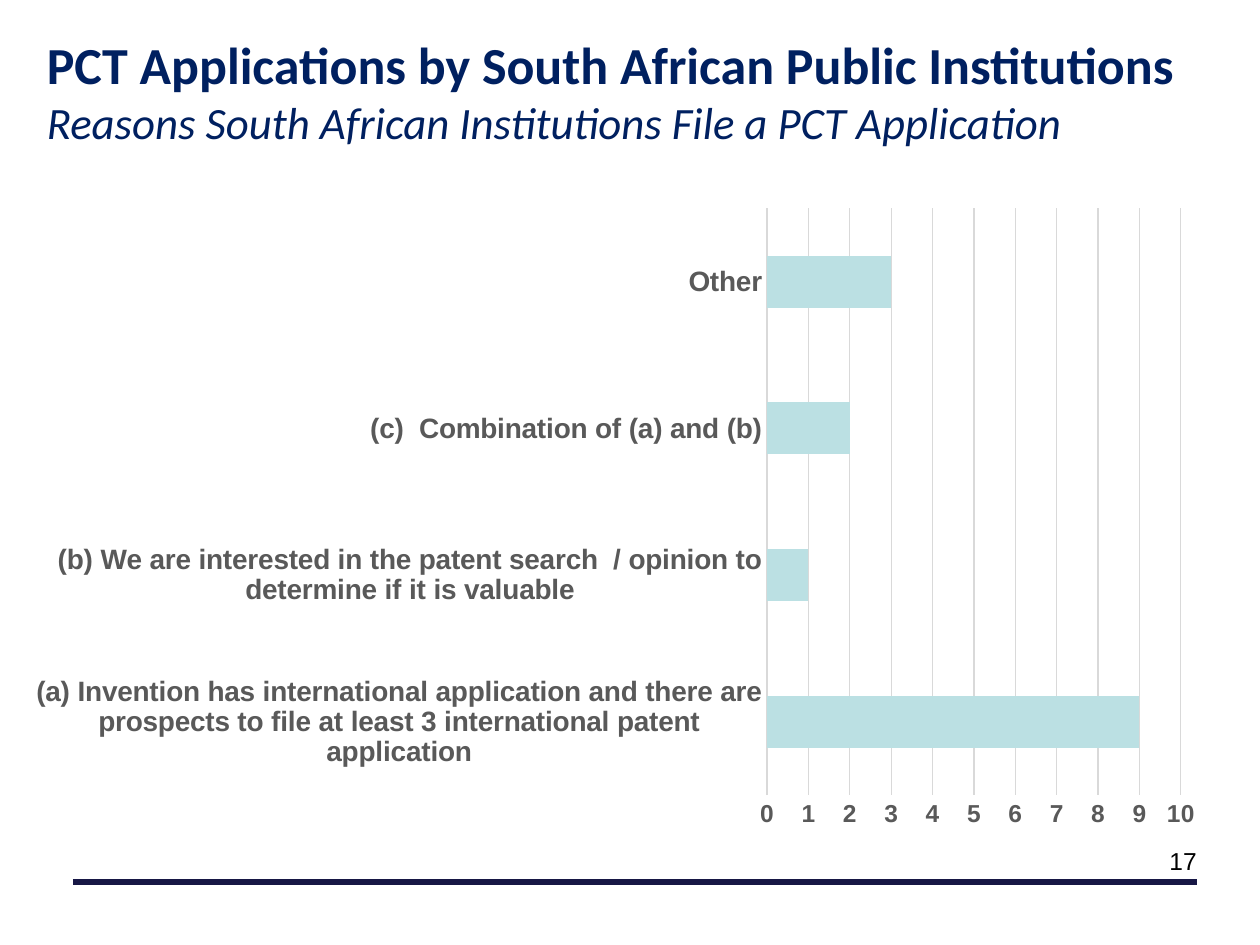
"""Build a slide with a bar chart of the reasons for filing PCT applications."""
from lxml import etree
from pptx import Presentation
from pptx.chart.data import CategoryChartData
from pptx.dml.color import RGBColor
from pptx.enum.chart import XL_CHART_TYPE as ChartType, XL_TICK_MARK as Tick
from pptx.enum.shapes import MSO_CONNECTOR as Connector
from pptx.enum.text import MSO_ANCHOR as Anchor, MSO_AUTO_SIZE as AutoSize, PP_ALIGN as Align
from pptx.oxml import parse_xml
from pptx.oxml.ns import nsdecls, qn
from pptx.util import Cm, Pt

REASONS = {
    "(a) Invention has international application and there are prospects "
    "to file at least 3 international patent application": 9,
    "(b) We are interested in the patent search  / opinion to determine if it is valuable": 1,
    "(c)  Combination of (a) and (b)": 2,
    "Other": 3,
}


def rgb(value):
    return RGBColor.from_string(value)


class Deck:
    """Hold the style and the current slide."""

    navy, rule, bar, label, grid = "002060", "171745", "BBE0E3", "595959", "D9D9D9"
    left, width = Cm(0.69), Cm(23.83)

    def __init__(self):
        self.prs = Presentation()
        self.prs.slide_width, self.prs.slide_height = Cm(25.4), Cm(19.05)
        self.s = self.prs.slides.add_slide(self.prs.slide_layouts[5])

    def font(self, font, size, color, name="Arial", bold=False, italic=False):
        font.name, font.size, font.bold, font.italic = name, Pt(size), bold, italic
        font.color.rgb = rgb(color)

    def title(self, heading, subheading):
        sp = self.s.shapes.title
        sp.left, sp.top, sp.width, sp.height = self.left, Cm(0.46), self.width, Cm(2.72)
        tf = sp.text_frame
        tf.text = f"{heading}\n{subheading}"
        tf.auto_size, tf.vertical_anchor = AutoSize.NONE, Anchor.MIDDLE
        for p in tf.paragraphs:
            p.alignment = Align.LEFT
        first, second = tf.paragraphs
        self.font(first.font, 29.7, self.navy, "Calibri", bold=True)
        self.font(second.font, 25.6, self.navy, "Calibri", italic=True)

    def line(self, x1, x2, y):
        ln = self.s.shapes.add_connector(Connector.STRAIGHT, Cm(x1), Cm(y), Cm(x2), Cm(y))
        ln.line.color.rgb, ln.line.width = rgb(self.rule), Pt(3)
        etree.SubElement(ln._element.spPr, qn("a:effectLst"))

    def page_number(self, number):
        tf = self.s.shapes.add_textbox(Cm(23.29), Cm(16.94), Cm(1.12), Cm(0.84)).text_frame
        tf.word_wrap, tf.auto_size = False, AutoSize.SHAPE_TO_FIT_TEXT
        p = tf.paragraphs[0]
        p.text, p.alignment = str(number), Align.CENTER
        self.font(p.font, 14, "000000")

    def axis(self, axis, size):
        axis.major_tick_mark = axis.minor_tick_mark = Tick.NONE
        self.font(axis.tick_labels.font, size, self.label, bold=True)

    def hairline(self, line):
        line.color.rgb, line.width = rgb(self.grid), Pt(0.75)

    def bar_chart(self, name, values):
        data = CategoryChartData()
        data.categories = list(values)
        data.add_series(name, list(values.values()))
        chart = self.s.shapes.add_chart(
            ChartType.BAR_CLUSTERED, self.left, Cm(3.94), self.width, Cm(13), data).chart
        chart.has_legend = chart.has_title = False
        self.font(chart.font, 10, "000000")
        cat, val = chart.category_axis, chart.value_axis
        self.axis(cat, 16)
        self.axis(val, 14)
        self.hairline(cat.format.line)
        self.hairline(val.major_gridlines.format.line)
        val.format.line.fill.background()
        val.minimum_scale, val.maximum_scale, val.major_unit = 0, 10, 1
        plot = chart.plots[0]
        plot.gap_width, plot.vary_by_categories = 182, False
        fill = plot.series[0].format.fill
        fill.solid()
        fill.fore_color.rgb = rgb(self.bar)
        self.plot_area(chart, x=0.62, y=0.02, w=0.35, h=0.91)

    def plot_area(self, chart, **box):
        area = chart._chartSpace.chart.plotArea
        for old in area.findall(qn("c:layout")):
            area.remove(old)
        modes = '<c:xMode val="edge"/><c:yMode val="edge"/>'
        sizes = "".join(f'<c:{key} val="{value}"/>' for key, value in box.items())
        area.insert(0, parse_xml(
            f'<c:layout {nsdecls("c")}><c:manualLayout><c:layoutTarget val="inner"/>'
            f"{modes}{sizes}</c:manualLayout></c:layout>"))


def main():
    deck = Deck()
    deck.line(1.47, 24.13, 17.78)
    deck.page_number(17)
    deck.title("PCT Applications by South African Public Institutions",
               "Reasons South African Institutions File a PCT Application")
    deck.bar_chart("Series 1", REASONS)
    deck.prs.save("out.pptx")


if __name__ == "__main__":
    main()
